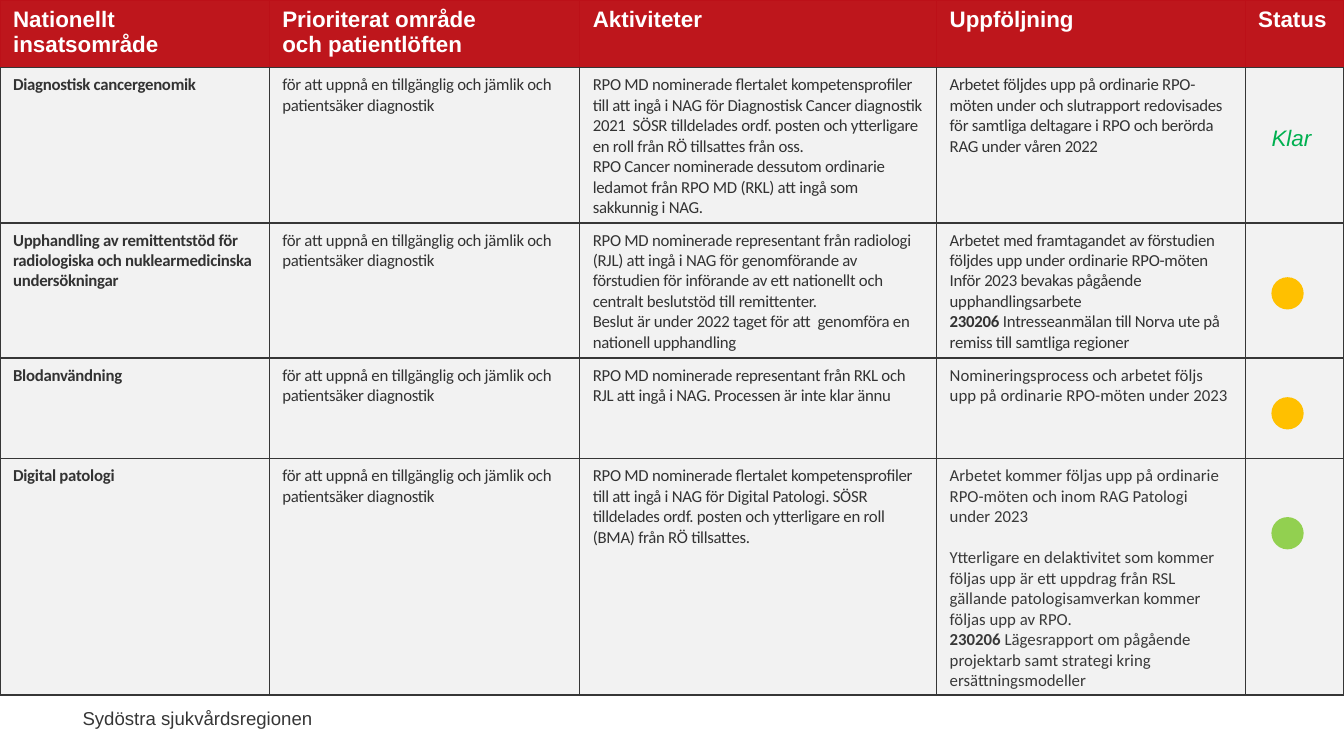
from lxml.etree import SubElement
from pptx import Presentation
from pptx.dml.color import RGBColor
from pptx.enum.shapes import MSO_SHAPE
from pptx.enum.text import PP_ALIGN
from pptx.oxml.ns import qn
from pptx.util import Inches, Pt

RED = RGBColor(0xBE, 0x16, 0x1C)
EDGE = RGBColor(0xBC, 0x10, 0x18)
WHITE = RGBColor(0xFF, 0xFF, 0xFF)
PALE = RGBColor(0xF2, 0xF2, 0xF2)
INK = RGBColor(0x33, 0x33, 0x33)
DARK = RGBColor(0x36, 0x36, 0x36)
GREY = RGBColor(0x39, 0x39, 0x39)
DONE = RGBColor(0x00, 0xB0, 0x50)
AMBER = RGBColor(0xFF, 0xC0, 0x00)
GREEN = RGBColor(0x92, 0xD0, 0x50)

GOAL = ["för att uppnå en tillgänglig och jämlik och patientsäker diagnostik"]
HEADS = ["Nationellt insatsområde", "Prioriterat område \voch patientlöften",
         "Aktiviteter", "Uppföljning", "Status"]
# Each row: area, activities, follow-up; a tuple is a bold lead and its text
ROWS = [
    ("Diagnostisk cancergenomik",
     ["RPO MD nominerade flertalet kompetensprofiler till att ingå i NAG för "
      "Diagnostisk Cancer diagnostik 2021  SÖSR tilldelades ordf. posten och "
      "ytterligare en roll från RÖ tillsattes från oss.",
      "RPO Cancer nominerade dessutom ordinarie ledamot från RPO MD (RKL) att "
      "ingå som sakkunnig i NAG."],
     ["Arbetet följdes upp på ordinarie RPO-möten under och slutrapport "
      "redovisades för samtliga deltagare i RPO och berörda RAG under våren 2022"]),
    ("Upphandling av remittentstöd för radiologiska och nuklearmedicinska "
     "undersökningar",
     ["RPO MD nominerade representant från radiologi (RJL) att ingå i NAG för "
      "genomförande av förstudien för införande av ett nationellt och centralt "
      "beslutstöd till remittenter.",
      "Beslut är under 2022 taget för att  genomföra en nationell upphandling"],
     ["Arbetet med framtagandet av förstudien följdes upp under ordinarie RPO-möten",
      "Inför 2023 bevakas pågående upphandlingsarbete",
      ("230206 ", "Intresseanmälan till Norva ute på remiss till samtliga regioner")]),
    ("Blodanvändning",
     ["RPO MD nominerade representant från RKL och RJL att ingå i NAG. "
      "Processen är inte klar ännu"],
     ["Nomineringsprocess och arbetet följs upp på ordinarie RPO-möten under 2023"]),
    ("Digital patologi",
     ["RPO MD nominerade flertalet kompetensprofiler till att ingå i NAG för "
      "Digital Patologi. SÖSR tilldelades ordf. posten och ytterligare en roll "
      "(BMA) från RÖ tillsattes."],
     ["Arbetet kommer följas upp på ordinarie RPO-möten och inom RAG Patologi "
      "under 2023",
      "Ytterligare en delaktivitet som kommer följas upp är ett uppdrag från RSL "
      "gällande patologisamverkan kommer följas upp av RPO.",
      ("230206 ", "Lägesrapport om pågående projektarb samt strategi kring "
                  "ersättningsmodeller")]),
]
LIGHTS = [AMBER, AMBER, GREEN]
WIDTHS = [2.67, 3.08, 3.54, 3.06, 0.98]
HEIGHTS = [0.66, 1.51, 1.31, 1, 2.3]

HEAD = {"name": "Arial", "size": Pt(16), "bold": True, "color": WHITE}
BODY = {"name": "Calibri", "size": Pt(12), "bold": False, "color": INK}
AREA = {**BODY, "bold": True}
STATE = {"name": "Arial", "size": Pt(16), "bold": False, "italic": True, "color": DONE}
FOOT = {"name": "Arial", "size": Pt(13.3), "color": DARK}
LATE = {3: DARK, 4: GREY}  # follow-up colour in rows with normal letter spacing


def style(font, look):
    for key, value in look.items():
        if key == "color":
            font.color.rgb = value
        else:
            setattr(font, key, value)


def write(frame, paras, look, tight=False):
    """Fill a text frame; tight narrows the letter spacing."""
    for i, item in enumerate(paras):
        para = frame.paragraphs[0] if i == 0 else frame.add_paragraph()
        parts = item if isinstance(item, tuple) else (item,)
        for j, part in enumerate(parts):
            for k, line in enumerate(part.split("\v")):
                if k:
                    para.add_line_break()
                run = para.add_run()
                run.text = line
                style(run.font, look)
                if j < len(parts) - 1:
                    run.font.bold = True
                if tight:
                    run.font._element.set("spc", "-20")


def border(cell, sides):
    props = cell._tc.get_or_add_tcPr()
    for side, (color, width) in sides.items():
        line = SubElement(props, qn("a:ln" + side), w=str(Pt(width)))
        fill = SubElement(line, qn("a:solidFill"))
        SubElement(fill, qn("a:srgbClr"), val=str(color))


def main():
    deck = Presentation()
    deck.slide_width, deck.slide_height = Inches(13.33), Inches(7.5)
    slide = deck.slides.add_slide(deck.slide_layouts[6])

    foot = slide.shapes.add_textbox(Inches(0.7), Inches(6.96), Inches(2.5), Inches(0.33))
    foot.text_frame.word_wrap = False
    write(foot.text_frame, ["Sydöstra sjukvårdsregionen"], FOOT)
    foot.text_frame.paragraphs[0].alignment = PP_ALIGN.RIGHT

    table = slide.shapes.add_table(len(HEIGHTS), len(WIDTHS), 0, 0, Inches(sum(WIDTHS)),
                                   Inches(sum(HEIGHTS))).table
    for col, width in zip(table.columns, WIDTHS):
        col.width = Inches(width)
    for row, height in zip(table.rows, HEIGHTS):
        row.height = Inches(height)

    grid = [[[head] for head in HEADS]]
    grid += [[[area], GOAL, acts, follow, []] for area, acts, follow in ROWS]
    grid[1][4] = ["Klar "]
    thin, rule = (EDGE, 0.75), (DARK, 1)
    for r, line in enumerate(grid):
        for c, paras in enumerate(line):
            cell = table.cell(r, c)
            cell.margin_left = cell.margin_right = Inches(0.13)
            cell.margin_top = cell.margin_bottom = Inches(0.07)
            edge = thin if r == 0 else rule
            border(cell, {"L": edge, "R": edge, "T": edge, "B": rule})
            cell.fill.solid()
            cell.fill.fore_color.rgb = PALE if r else RED
            look = HEAD if r == 0 else {0: AREA, 4: STATE}.get(c, BODY)
            late = c == 3 and r in LATE
            if late:
                look = {**BODY, "color": LATE[r]}
            write(cell.text_frame, paras, look, r > 0 and c < 4 and not late)

    table.cell(4, 3).text_frame.paragraphs[1].space_before = Pt(14.6)
    state = table.cell(1, 4)
    state.margin_top = Inches(0.58)
    state.text_frame.paragraphs[0].alignment = PP_ALIGN.CENTER

    for i, color in enumerate(LIGHTS):
        light = slide.shapes.add_shape(MSO_SHAPE.OVAL, Inches(12.61), Inches(2.75 + 1.19 * i),
                                       Inches(0.32), Inches(0.32))
        light.shadow.inherit = False
        light.fill.solid()
        light.fill.fore_color.rgb = color
        light.line.fill.background()

    deck.save("out.pptx")


if __name__ == "__main__":
    main()
